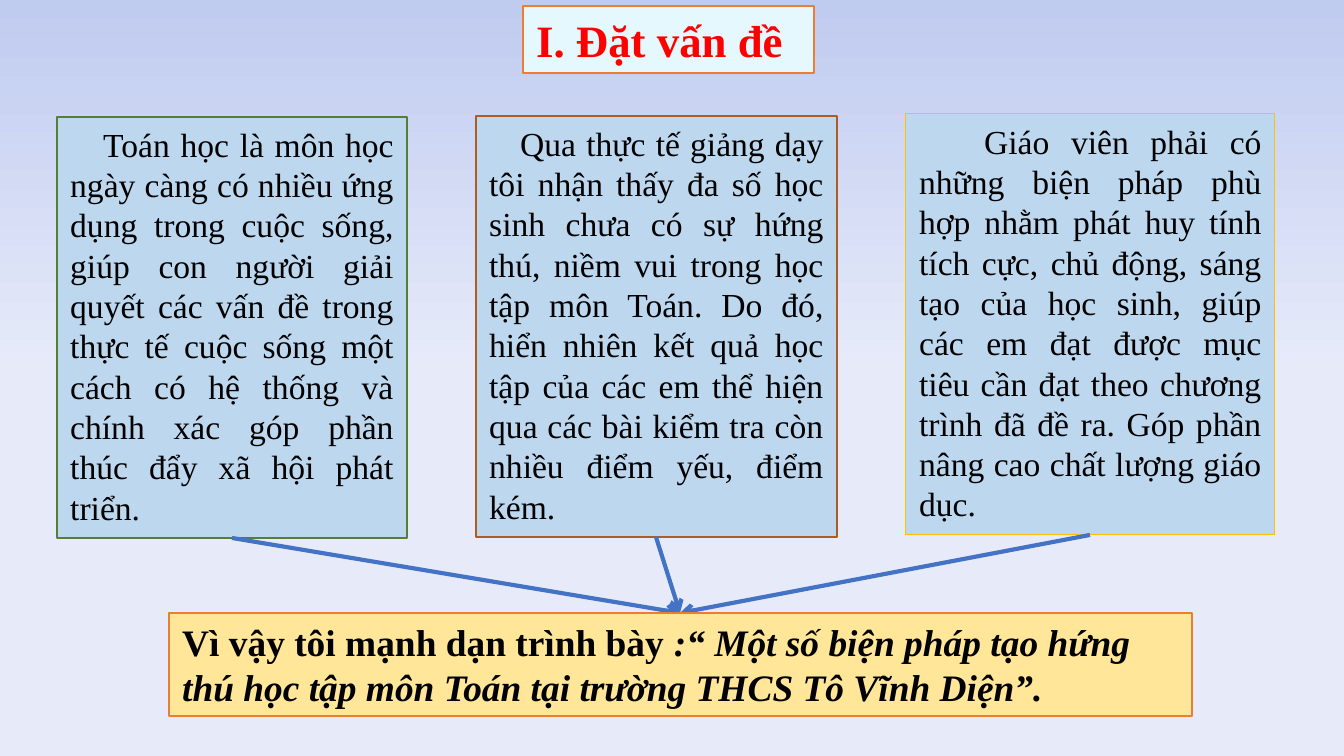
from dataclasses import dataclass

import lxml.etree
import pptx
import pptx.dml.color
import pptx.enum.shapes
import pptx.enum.text
import pptx.oxml.ns
import pptx.util

EMU_PER_PX = 9144000 / 1344


@dataclass(frozen=True)
class Theme:
    font: str = "Times New Roman"
    title_size: int = 24
    body_size: int = 18
    conclusion_size: int = 20
    text: str = "000000"
    title_text: str = "FF0000"
    title_fill: str = "E5F8FE"
    card_fill: str = "BDD7EE"
    conclusion_fill: str = "FFE699"
    accent: str = "ED7D31"
    arrow: str = "4472C4"
    background_top: str = "C0CBF0"
    background_bottom: str = "E7EBF9"


THEME = Theme()


@dataclass(frozen=True)
class Box:
    left: int
    top: int
    width: int
    height: int
    fill: str
    line: str
    line_width: float = 1

    @property
    def center(self) -> int:
        return self.left + self.width // 2

    @property
    def bottom(self) -> int:
        return self.top + self.height


@dataclass(frozen=True)
class Card:
    box: Box
    indent: int
    text: str


TITLE = Box(523, 6, 291, 67, THEME.title_fill, THEME.accent)
CONCLUSION = Box(169, 613, 1023, 103, THEME.conclusion_fill, THEME.accent)
CARDS = [
    Card(Box(57, 117, 350, 421, THEME.card_fill, "538035"), 33,
         "Toán học là môn học ngày càng có nhiều ứng dụng trong cuộc sống, "
         "giúp con người giải quyết các vấn đề trong thực tế cuộc sống một cách "
         "có hệ thống và chính xác góp phần thúc đẩy xã hội phát triển."),
    Card(Box(476, 116, 361, 421, THEME.card_fill, "AF5C24"), 31,
         "Qua thực tế giảng dạy tôi nhận thấy đa số học sinh chưa có sự hứng thú, "
         "niềm vui trong học tập môn Toán. Do đó, hiển nhiên kết quả học tập của "
         "các em thể hiện qua các bài kiểm tra còn nhiều điểm yếu, điểm kém."),
    Card(Box(906, 114, 369, 421, THEME.card_fill, "FFC000", 0.5), 65,
         "Giáo viên phải có những biện pháp phù hợp nhằm phát huy tính tích cực, "
         "chủ động, sáng tạo của học sinh, giúp các em đạt được mục tiêu cần đạt "
         "theo chương trình đã đề ra. Góp phần nâng cao chất lượng giáo dục."),
]


def px(value: int) -> pptx.util.Emu:
    return pptx.util.Emu(round(value * EMU_PER_PX))


def rgb(value: str) -> pptx.dml.color.RGBColor:
    return pptx.dml.color.RGBColor.from_string(value)


def add_box(slide, box: Box):
    """Draw a filled rectangle and return its first paragraph."""
    shape = slide.shapes.add_shape(
        pptx.enum.shapes.MSO_SHAPE.RECTANGLE,
        px(box.left), px(box.top), px(box.width), px(box.height))
    shape.shadow.inherit = False
    shape.fill.solid()
    shape.fill.fore_color.rgb = rgb(box.fill)
    shape.line.color.rgb = rgb(box.line)
    shape.line.width = pptx.util.Pt(box.line_width)
    frame = shape.text_frame
    frame.word_wrap = True
    frame.auto_size = pptx.enum.text.MSO_AUTO_SIZE.SHAPE_TO_FIT_TEXT
    frame.vertical_anchor = pptx.enum.text.MSO_ANCHOR.TOP
    paragraph = frame.paragraphs[0]
    paragraph.alignment = pptx.enum.text.PP_ALIGN.LEFT
    return paragraph


def add_text(paragraph, text: str, *, size: int, color: str = THEME.text,
             bold: bool = False, italic: bool = False) -> None:
    run = paragraph.add_run()
    run.text = text
    run.font.name = THEME.font
    run.font.size = pptx.util.Pt(size)
    run.font.color.rgb = rgb(color)
    run.font.bold = bold
    run.font.italic = italic


def add_card(slide, card: Card) -> None:
    paragraph = add_box(slide, card.box)
    paragraph.alignment = pptx.enum.text.PP_ALIGN.JUSTIFY
    properties = paragraph._p.get_or_add_pPr()
    properties.set("marL", "0")
    properties.set("indent", str(px(card.indent)))
    add_text(paragraph, card.text, size=THEME.body_size)


def add_arrow(slide, start: Box, end: Box) -> None:
    """Point from the bottom centre of one box to the top centre of another."""
    connector = slide.shapes.add_connector(
        pptx.enum.shapes.MSO_CONNECTOR.STRAIGHT,
        px(start.center), px(start.bottom), px(end.center), px(end.top))
    connector.line.color.rgb = rgb(THEME.arrow)
    connector.line.width = pptx.util.Pt(2.25)
    qn = pptx.oxml.ns.qn
    lxml.etree.SubElement(connector.line._get_or_add_ln(), qn("a:tailEnd"), type="arrow")
    lxml.etree.SubElement(connector._element.spPr, qn("a:effectLst"))


def set_background(slide) -> None:
    fill = slide.background.fill
    fill.gradient()
    fill.gradient_angle = 270
    stops = [(0, THEME.background_top), (0.5, THEME.background_bottom)]
    for stop, (position, color) in zip(fill.gradient_stops, stops):
        stop.position = position
        stop.color.rgb = rgb(color)


def main() -> None:
    presentation = pptx.Presentation()
    presentation.slide_width = px(1344)
    presentation.slide_height = px(756)
    slide = presentation.slides.add_slide(presentation.slide_layouts[6])
    set_background(slide)

    # Title
    add_text(add_box(slide, TITLE), "I. Đặt vấn đề", size=THEME.title_size,
             color=THEME.title_text, bold=True)

    # Reasons, each leading to the conclusion
    for card in CARDS:
        add_card(slide, card)
    for card in CARDS:
        add_arrow(slide, card.box, CONCLUSION)

    # Conclusion
    paragraph = add_box(slide, CONCLUSION)
    add_text(paragraph, "Vì vậy tôi mạnh dạn trình bày ",
             size=THEME.conclusion_size, bold=True)
    add_text(paragraph, ":“ Một số biện pháp tạo hứng thú học tập môn Toán "
             "tại trường THCS Tô Vĩnh Diện”.",
             size=THEME.conclusion_size, bold=True, italic=True)

    presentation.save("out.pptx")


if __name__ == "__main__":
    main()
